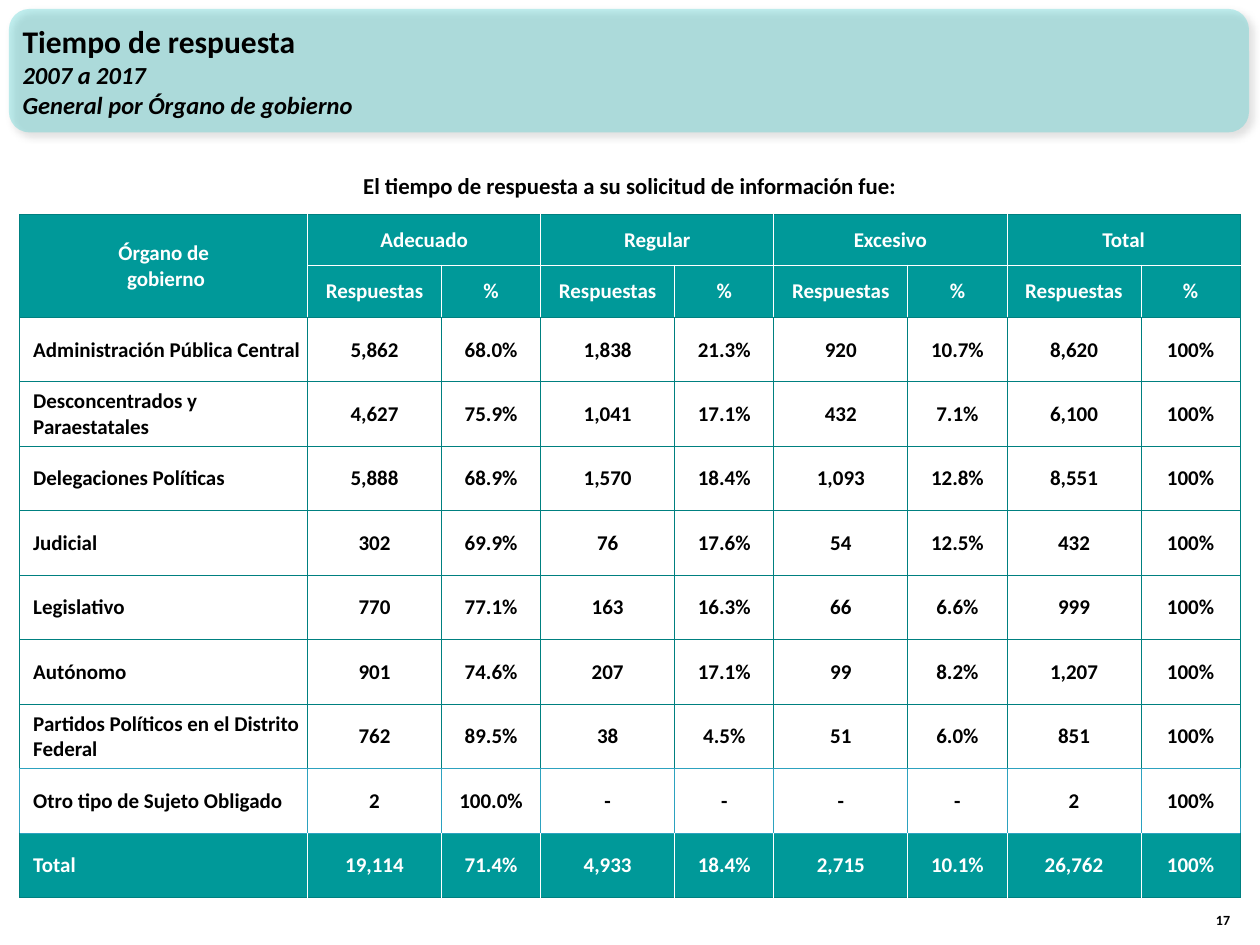
from lxml.etree import SubElement
from pptx import Presentation
from pptx.dml.color import RGBColor
from pptx.enum.shapes import MSO_SHAPE as Shape
from pptx.enum.text import MSO_ANCHOR as Anchor, MSO_AUTO_SIZE as AutoSize, PP_ALIGN as Align
from pptx.oxml import parse_xml
from pptx.oxml.ns import nsdecls, qn
from pptx.util import Cm, Pt

BLACK = RGBColor(0x00, 0x00, 0x00)
WHITE = RGBColor(0xFF, 0xFF, 0xFF)
AQUA = RGBColor(0x33, 0xCC, 0xCC)
TEAL = RGBColor(0x00, 0x99, 0x99)
DARK_TEAL = RGBColor(0x00, 0x80, 0x80)
BLUE = RGBColor(0x2D, 0xA2, 0xBF)

# Table content
GROUPS = ["Adecuado", "Regular", "Excesivo", "Total"]
BODY = [
    ["Administración Pública Central", "5,862", "68.0%", "1,838", "21.3%", "920", "10.7%", "8,620", "100%"],
    ["Desconcentrados y Paraestatales", "4,627", "75.9%", "1,041", "17.1%", "432", "7.1%", "6,100", "100%"],
    ["Delegaciones Políticas", "5,888", "68.9%", "1,570", "18.4%", "1,093", "12.8%", "8,551", "100%"],
    ["Judicial", "302", "69.9%", "76", "17.6%", "54", "12.5%", "432", "100%"],
    ["Legislativo", "770", "77.1%", "163", "16.3%", "66", "6.6%", "999", "100%"],
    ["Autónomo", "901", "74.6%", "207", "17.1%", "99", "8.2%", "1,207", "100%"],
    ["Partidos Políticos en el Distrito Federal", "762", "89.5%", "38", "4.5%", "51", "6.0%", "851", "100%"],
    ["Otro tipo de Sujeto Obligado", "2", "100.0%", "-", "-", "-", "-", "2", "100%"],
    ["Total", "19,114", "71.4%", "4,933", "18.4%", "2,715", "10.1%", "26,762", "100%"],
]
HEADER = [
    ["Órgano de\n gobierno"] + [text for group in GROUPS for text in (group, "")],
    [""] + ["Respuestas", "%"] * len(GROUPS),
]
ROWS = HEADER + BODY
COLUMN_WIDTHS = [5.8] + [2.7, 2.0] * len(GROUPS)
ROW_HEIGHTS = [1.02] * len(HEADER) + [1.3] * len(BODY)
LAST_ROW, LAST_COLUMN = len(ROWS) - 1, len(COLUMN_WIDTHS) - 1
OTHER_ROW = LAST_ROW - 1


def border_colors(row, column):
    """Colours of the left, right, top and bottom border of a cell."""
    if row == OTHER_ROW:
        return [BLUE] * 4
    filled = row < len(HEADER) or row == LAST_ROW
    inner = WHITE if filled else DARK_TEAL
    left = DARK_TEAL if column == 0 else inner
    right = DARK_TEAL if column == LAST_COLUMN else inner
    top = BLUE if row == LAST_ROW else WHITE if row == 1 else DARK_TEAL
    bottom = BLUE if row == OTHER_ROW - 1 else DARK_TEAL
    if row == 0 and column > 0:
        bottom = WHITE
        right = DARK_TEAL if column >= LAST_COLUMN - 1 else WHITE
    return [left, right, top, bottom]


class SlideBuilder:
    font_name = "Calibri"

    def __init__(self, page):
        self.page = page

    def add_lines(self, frame, lines, align=Align.LEFT, color=BLACK):
        """Fill a text frame with (text, size, italic) lines."""
        for index, (text, size, italic) in enumerate(lines):
            para = frame.paragraphs[0] if index == 0 else frame.add_paragraph()
            para.alignment = align
            span = para.add_run()
            span.text = text
            span.font.name = self.font_name
            span.font.size = Pt(size)
            span.font.bold = True
            span.font.italic = italic
            span.font.color.rgb = color

    def title(self, left, top, width, height, lines):
        box = self.page.shapes.title
        box.left, box.top, box.width, box.height = Cm(left), Cm(top), Cm(width), Cm(height)
        frame = box.text_frame
        frame.word_wrap = True
        frame.auto_size = AutoSize.NONE
        frame.vertical_anchor = Anchor.MIDDLE
        self.add_lines(frame, lines)

    def banner(self, left, top, width, height):
        """Translucent rounded panel behind the title."""
        panel = self.page.shapes.add_shape(
            Shape.ROUNDED_RECTANGLE, Cm(left), Cm(top), Cm(width), Cm(height))
        panel.fill.solid()
        panel.fill.fore_color.rgb = AQUA
        panel.line.fill.background()
        properties = panel.element.spPr
        color = properties.find(qn("a:solidFill"))[0]
        SubElement(color, qn("a:alpha"), val="30000")
        properties.append(parse_xml(
            f'<a:effectLst {nsdecls("a")}>'
            f'<a:outerShdw blurRad="{Pt(4)}" dist="{Pt(3)}" dir="2700000" algn="tl" rotWithShape="0">'
            '<a:srgbClr val="000000"><a:alpha val="40000"/></a:srgbClr>'
            '</a:outerShdw></a:effectLst>'))
        self.page.shapes.title.element.addprevious(panel.element)

    def text(self, left, top, width, height, lines, align, anchor=Anchor.TOP):
        box = self.page.shapes.add_textbox(Cm(left), Cm(top), Cm(width), Cm(height))
        frame = box.text_frame
        frame.word_wrap = True
        frame.vertical_anchor = anchor
        self.add_lines(frame, lines, align)

    def cell_borders(self, cell, colors):
        properties = cell._tc.get_or_add_tcPr()
        for index, (side, color) in enumerate(zip(("lnL", "lnR", "lnT", "lnB"), colors)):
            properties.insert(index, parse_xml(
                f'<a:{side} {nsdecls("a")} w="{Pt(0.5)}"><a:solidFill>'
                f'<a:srgbClr val="{color}"/></a:solidFill></a:{side}>'))

    def cell(self, cell, text, row, column):
        filled = row < len(HEADER) or row == LAST_ROW
        label = column == 0 and row >= len(HEADER)
        cell.vertical_anchor = Anchor.MIDDLE
        cell.margin_left = Cm(0.27 if label else 0.02)
        cell.margin_right = cell.margin_top = Cm(0.02)
        cell.margin_bottom = 0
        if filled:
            cell.fill.solid()
            cell.fill.fore_color.rgb = TEAL
        else:
            cell.fill.background()
        if text:
            self.add_lines(cell.text_frame, [(line, 12, False) for line in text.split("\n")],
                           Align.LEFT if label else Align.CENTER, WHITE if filled else BLACK)
        self.cell_borders(cell, border_colors(row, column))

    def table(self, left, top):
        grid = self.page.shapes.add_table(
            len(ROWS), len(COLUMN_WIDTHS), Cm(left), Cm(top),
            Cm(sum(COLUMN_WIDTHS)), Cm(sum(ROW_HEIGHTS))).table
        grid.first_row = grid.horz_banding = False
        for column, width in zip(grid.columns, COLUMN_WIDTHS):
            column.width = Cm(width)
        for row, height in zip(grid.rows, ROW_HEIGHTS):
            row.height = Cm(height)
        for row, texts in enumerate(ROWS):
            for column, text in enumerate(texts):
                self.cell(grid.cell(row, column), text, row, column)
        # Merged headings
        grid.cell(0, 0).merge(grid.cell(1, 0))
        for column in range(1, LAST_COLUMN, 2):
            grid.cell(0, column).merge(grid.cell(0, column + 1))


def main():
    deck = Presentation()
    deck.slide_width, deck.slide_height = Cm(25.4), Cm(19.05)
    builder = SlideBuilder(deck.slides.add_slide(deck.slide_layouts[5]))

    # Heading
    builder.banner(0.18, 0.18, 25, 2.49)
    builder.title(0.2, 0.23, 23.3, 2.39, [
        ("Tiempo de respuesta", 18, False),
        ("2007 a 2017", 14, True),
        ("General por Órgano de gobierno", 14, True),
    ])

    # Results table and its caption
    builder.table(0.4, 4.32)
    builder.text(2.26, 3.33, 20.85, 0.81,
                 [("El tiempo de respuesta a su solicitud de información fue:", 13, False)], Align.CENTER)

    # Page number
    builder.text(24.03, 17.81, 1.02, 1.02, [("17", 8, False)], Align.RIGHT, Anchor.BOTTOM)

    deck.save("out.pptx")


if __name__ == "__main__":
    main()
